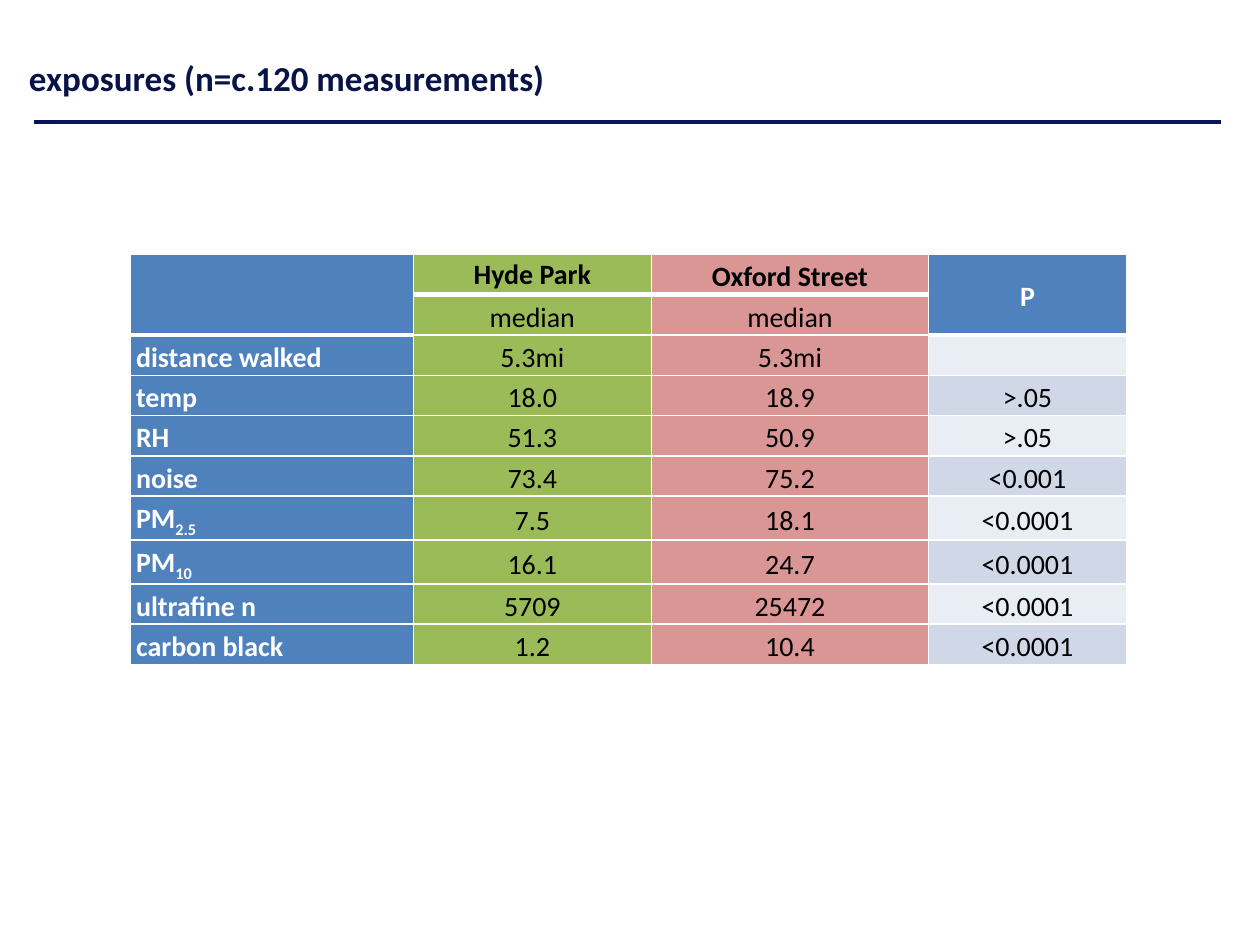
from dataclasses import dataclass

from lxml import etree
from pptx import Presentation
from pptx import util as u
from pptx.dml import color
from pptx.enum import shapes, text
from pptx.oxml import ns

NAVY = color.RGBColor(0x08, 0x13, 0x48)
RULE = color.RGBColor(0x09, 0x15, 0x53)
WHITE = color.RGBColor(0xFF, 0xFF, 0xFF)
BLACK = color.RGBColor(0, 0, 0)
BLUE = color.RGBColor(0x4F, 0x81, 0xBD)
GREEN = color.RGBColor(0x9B, 0xBB, 0x59)
PINK = color.RGBColor(0xD9, 0x96, 0x94)
PALE = color.RGBColor(0xE9, 0xED, 0xF4)
MID = color.RGBColor(0xD0, 0xD8, 0xE8)

ROW_HEIGHT = 0.32
CELL_FORMAT = {
    "margin_left": u.Inches(0.05),
    "margin_right": u.Inches(0.05),
    "margin_top": 0,
    "margin_bottom": 0,
    "vertical_anchor": text.MSO_ANCHOR.MIDDLE,
}


@dataclass
class Column:
    width: float
    fills: tuple
    head_fill: color.RGBColor
    head_rows: int
    align: text.PP_ALIGN = text.PP_ALIGN.CENTER


@dataclass
class Measure:
    name: str
    park: str
    street: str
    p_value: str
    sub: str = ""


COLUMNS = [
    Column(2.25, (BLUE, BLUE), BLUE, 2, text.PP_ALIGN.LEFT),
    Column(1.89, (GREEN, GREEN), GREEN, 1),
    Column(2.2, (PINK, PINK), PINK, 1),
    Column(1.57, (PALE, MID), BLUE, 2),
]
ROWS = [
    Measure("", "Hyde Park", "Oxford Street", "P"),
    Measure("", "median", "median", ""),
    Measure("distance walked", "5.3mi", "5.3mi", ""),
    Measure("temp", "18.0", "18.9", ">.05"),
    Measure("RH", "51.3", "50.9", ">.05"),
    Measure("noise", "73.4", "75.2", "<0.001"),
    Measure("PM", "7.5", "18.1", "<0.0001", "2.5"),
    Measure("PM", "16.1", "24.7", "<0.0001", "10"),
    Measure("ultrafine n", "5709", "25472", "<0.0001"),
    Measure("carbon black", "1.2", "10.4", "<0.0001"),
]


def set_format(obj, values: dict) -> None:
    for name, value in values.items():
        setattr(obj, name, value)


def add_run(p, words: str, size: float, bold: bool, rgb: color.RGBColor):
    r = p.add_run()
    r.text = words
    set_format(r.font, {"name": "Calibri", "size": u.Pt(size), "bold": bold})
    r.font.color.rgb = rgb
    return r


def add_border(cell, side: str, points: float) -> None:
    tc_pr = cell._tc.get_or_add_tcPr()
    ln = etree.SubElement(tc_pr, ns.qn(f"a:ln{side}"), w=str(u.Pt(points)))
    fill = etree.SubElement(ln, ns.qn("a:solidFill"))
    etree.SubElement(fill, ns.qn("a:srgbClr"), val=str(WHITE))


def fill_cell(cell, row: int, col: int, words: str, sub: str) -> None:
    column = COLUMNS[col]
    is_head = row < column.head_rows
    set_format(cell, CELL_FORMAT)
    add_border(cell, "L", 1)
    add_border(cell, "R", 1)
    add_border(cell, "T", 3 if 0 < row <= column.head_rows else 1)
    add_border(cell, "B", 3 if is_head else 1)
    cell.fill.solid()
    cell.fill.fore_color.rgb = column.head_fill if is_head else column.fills[row % 2]
    if not words:
        return
    p = cell.text_frame.paragraphs[0]
    p.alignment = column.align
    if (row, col) != (0, 1):
        p.line_spacing = 1.15
    rgb = WHITE if column.head_fill == BLUE and (is_head or col == 0) else BLACK
    bold = is_head or col == 0
    add_run(p, words, 16, bold, rgb)
    if sub:
        r = add_run(p, sub, 16, bold, rgb)
        r._r.get_or_add_rPr().set("baseline", "-25000")


def add_title(s) -> None:
    sp = s.shapes.title
    set_format(sp, {"left": u.Inches(0.13), "top": u.Inches(0.11),
                    "width": u.Inches(9.42), "height": u.Inches(1.01)})
    tf = sp.text_frame
    set_format(tf, {"vertical_anchor": text.MSO_ANCHOR.MIDDLE, "word_wrap": True,
                    "auto_size": text.MSO_AUTO_SIZE.NONE})
    p = tf.paragraphs[0]
    p.alignment = text.PP_ALIGN.LEFT
    add_run(p, "exposures (n=c.120 measurements)", 20, True, NAVY)


def add_rule(s) -> None:
    y = u.Inches(0.97)
    line = s.shapes.add_connector(
        shapes.MSO_CONNECTOR.STRAIGHT, u.Inches(0.27), y, u.Inches(9.69), y)
    line.line.color.rgb = RULE
    line.line.width = u.Pt(2.25)
    etree.SubElement(line._element.spPr, ns.qn("a:effectLst"))


def add_exposures(s) -> None:
    width = sum(c.width for c in COLUMNS)
    table = s.shapes.add_table(
        len(ROWS), len(COLUMNS), u.Inches(1.03), u.Inches(2.02),
        u.Inches(width), u.Inches(ROW_HEIGHT * len(ROWS))).table
    for row in table.rows:
        row.height = u.Inches(ROW_HEIGHT)
    for i, column in enumerate(COLUMNS):
        table.columns[i].width = u.Inches(column.width)
        if column.head_rows > 1:
            table.cell(0, i).merge(table.cell(column.head_rows - 1, i))
    for i, m in enumerate(ROWS):
        for j, words in enumerate((m.name, m.park, m.street, m.p_value)):
            fill_cell(table.cell(i, j), i, j, words, m.sub if j == 0 else "")


def main() -> None:
    prs = Presentation()
    set_format(prs, {"slide_width": u.Inches(10), "slide_height": u.Inches(7.5)})
    s = prs.slides.add_slide(prs.slide_layouts[5])
    add_title(s)
    add_rule(s)
    add_exposures(s)
    prs.save("out.pptx")


if __name__ == "__main__":
    main()
